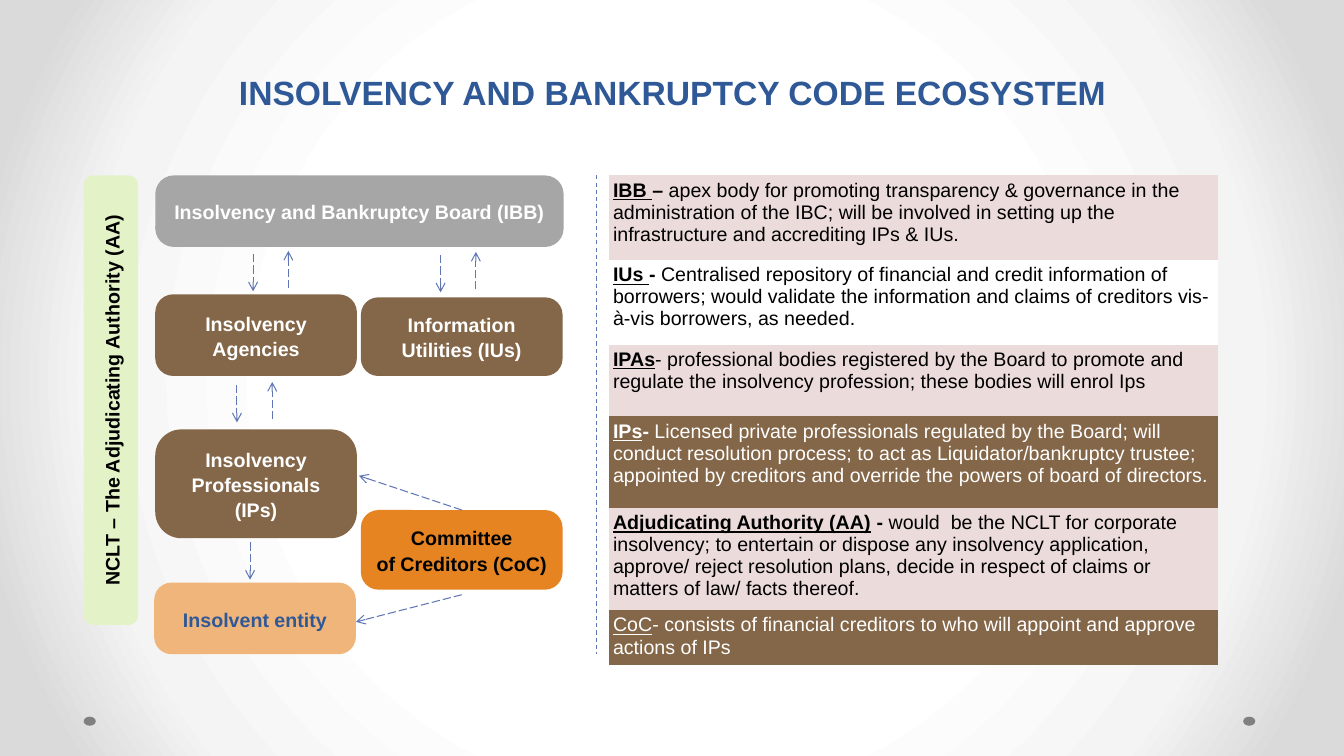
from lxml import etree
from pptx import Presentation
from pptx.dml.color import RGBColor
from pptx.enum.dml import MSO_LINE_DASH_STYLE as Dash
from pptx.enum.shapes import MSO_CONNECTOR, MSO_SHAPE
from pptx.enum.text import MSO_ANCHOR, PP_ALIGN
from pptx.oxml import parse_xml
from pptx.oxml.ns import nsdecls, qn
from pptx.util import Inches, Pt

COLORS = {
    "white": "FFFFFF", "black": "000000", "blue": "2F5897", "line": "6076B4",
    "brown": "846648", "pink": "ECDBDB", "gray": "A6A6A6", "green": "E3F2C7",
    "orange": "E68422", "peach": "F0B57A", "dot": "808080",
}
FONT = "Arial"
TITLE = "INSOLVENCY AND BANKRUPTCY CODE ECOSYSTEM"

# Lines of text, (left, top, width, height), corner, fill, text colour, rotation
BOXES = [
    (["Insolvency and Bankruptcy Board (IBB)"], (1.54, 1.74, 4.05, 0.71), 0.26, "gray", "white", 0),
    (["Insolvency Agencies"], (1.54, 2.92, 2, 0.81), 0.22, "brown", "white", 0),
    (["Insolvency Professionals (IPs)"], (1.54, 4.26, 2, 1.08), 0.24, "brown", "white", 0),
    (["Information Utilities (IUs)"], (3.58, 2.95, 2, 0.78), 0.22, "brown", "white", 0),
    (["NCLT – The Adjudicating Authority (AA)"], (-1.13, 3.7, 4.46, 0.54), 0.17, "green", "black", 270),
    (["Committee", "of Creditors (CoC)"], (3.58, 5.06, 2, 0.79), 0.22, "orange", "black", 0),
    (["Insolvent entity"], (1.53, 5.78, 2, 0.71), 0.24, "peach", "blue", 0),
]

# Left and top of each down/up pair of arrows
ARROW_PAIRS = [(2.51, 2.52), (4.37, 2.53), (2.35, 3.82)]
ARROW_LENGTH, PAIR_GAP, PAIR_RISE = 0.37, 0.35, 0.03
SINGLE_ARROWS = [
    ((4.58, 5.06), (3.56, 4.72)),
    ((4.58, 5.9), (3.53, 6.17)),
    ((2.48, 5.38), (2.48, 5.75)),
]
DIVIDER = ((5.92, 1.74), (5.92, 6.49))

# Row height, fill, text colour, then underlined term, bold?, bold dash, description
ROLES = [
    (0.84, "pink", "black", "IBB ", True, "– ",
     "apex body for promoting transparency & governance in the administration of the IBC; "
     "will be involved in setting up the infrastructure and accrediting IPs & IUs."),
    (0.84, "white", "black", "IUs ", True, "- ",
     "Centralised repository of financial and credit information of borrowers; would validate "
     "the information and claims of creditors vis-à-vis borrowers, as needed."),
    (0.71, "pink", "black", "IPAs", True, "",
     "- professional bodies registered by the Board to promote and regulate the insolvency "
     "profession; these bodies will enrol Ips"),
    (0.91, "brown", "white", "IPs", True, "-",
     " Licensed private professionals regulated by the Board; will conduct resolution process; "
     "to act as Liquidator/bankruptcy trustee; appointed by creditors and override the powers "
     "of board of directors."),
    (0.91, "pink", "black", "Adjudicating Authority (AA)", True, " -",
     " would  be the NCLT for corporate insolvency; to entertain or dispose any insolvency "
     "application, approve/ reject resolution plans, decide in respect of claims or matters "
     "of law/ facts thereof."),
    (0.54, "brown", "white", "CoC", False, "",
     "- consists of financial creditors to who will appoint and approve actions of IPs"),
]


def rgb(name):
    return RGBColor.from_string(COLORS[name])


def set_background(slide):
    """Fill the slide with a gradient that darkens from its centre."""
    stops = "".join(
        f'<a:gs pos="{position}000"><a:srgbClr val="{color}"/></a:gs>'
        for position, color in [(50, "FFFFFF"), (76, "F4F4F4"), (92, "DADADA")]
    )
    fill = slide.background.fill
    fill.solid()
    properties = slide.element.cSld.bg.bgPr
    properties.replace(properties[0], parse_xml(
        f'<a:gradFill {nsdecls("a")} rotWithShape="1"><a:gsLst>{stops}</a:gsLst>'
        '<a:path path="circle"><a:fillToRect l="50000" t="50000" r="50000" b="50000"/>'
        '</a:path></a:gradFill>'
    ))


def add_run(paragraph, text, color, size=14, bold=True, underline=False):
    run = paragraph.add_run()
    run.text = text
    run.font.name, run.font.size = FONT, Pt(size)
    run.font.bold, run.font.underline = bold, underline
    run.font.color.rgb = rgb(color)


def add_filled(slide, kind, bounds, fill):
    shape = slide.shapes.add_shape(kind, *map(Inches, bounds))
    shape.shadow.inherit = False
    shape.fill.solid()
    shape.fill.fore_color.rgb = rgb(fill)
    shape.line.fill.background()
    return shape


def add_box(slide, lines, bounds, corner, fill, color, rotation):
    box = add_filled(slide, MSO_SHAPE.ROUNDED_RECTANGLE, bounds, fill)
    box.adjustments[0] = corner
    box.rotation = rotation
    frame = box.text_frame
    frame.word_wrap = True
    frame.vertical_anchor = MSO_ANCHOR.MIDDLE
    for index, line in enumerate(lines):
        paragraph = frame.add_paragraph() if index else frame.paragraphs[0]
        paragraph.alignment = PP_ALIGN.CENTER
        paragraph.line_spacing = 1.07
        add_run(paragraph, line, color)


def add_line(slide, start, end, dash=Dash.LONG_DASH, arrow=True):
    connector = slide.shapes.add_connector(
        MSO_CONNECTOR.STRAIGHT, *map(Inches, (*start, *end)))
    connector.line.color.rgb = rgb("line")
    connector.line.width = Pt(0.75)
    connector.line.dash_style = dash
    if arrow:
        etree.SubElement(connector.line._get_or_add_ln(), qn("a:tailEnd"), type="arrow")
    etree.SubElement(connector._element.spPr, qn("a:effectLst"))


def add_title(slide):
    title = slide.shapes.add_textbox(*map(Inches, (0.67, 0.33, 12, 0.83)))
    frame = title.text_frame
    frame.word_wrap = True
    frame.vertical_anchor = MSO_ANCHOR.BOTTOM
    paragraph = frame.paragraphs[0]
    paragraph.alignment = PP_ALIGN.CENTER
    paragraph.line_spacing = Pt(58)
    add_run(paragraph, TITLE, "blue", 24)


def add_roles_table(slide):
    height = sum(role[0] for role in ROLES)
    bounds = map(Inches, (6.04, 1.74, 6.04, height))
    table = slide.shapes.add_table(len(ROLES), 1, *bounds).table
    table.first_row = table.horz_banding = False
    for row, role in zip(table.rows, ROLES):
        row_height, fill, color, term, bold, dash, description = role
        row.height = Inches(row_height)
        cell = row.cells[0]
        cell.fill.solid()
        cell.fill.fore_color.rgb = rgb(fill)
        cell.margin_left = cell.margin_right = Inches(0.04)
        cell.margin_top = cell.margin_bottom = Inches(0.04)
        for side in ("lnL", "lnR", "lnT", "lnB"):
            border = parse_xml(f'<a:{side} {nsdecls("a")} w="0"><a:noFill/></a:{side}>')
            cell.fill._xPr.insert(len(cell.fill._xPr) - 1, border)
        paragraph = cell.text_frame.paragraphs[0]
        add_run(paragraph, term, color, bold=bold, underline=True)
        if dash:
            add_run(paragraph, dash, color)
        add_run(paragraph, description, color, bold=False)


def main():
    presentation = Presentation()
    presentation.slide_width, presentation.slide_height = Inches(13.33), Inches(7.5)
    slide = presentation.slides.add_slide(presentation.slide_layouts[6])
    set_background(slide)
    for left in (12.33, 0.83):
        add_filled(slide, MSO_SHAPE.OVAL, (left, 7.11, 0.12, 0.09), "dot")
    add_title(slide)
    add_roles_table(slide)
    for box in BOXES:
        add_box(slide, *box)
    for start, end in SINGLE_ARROWS:
        add_line(slide, start, end)
    for left, top in ARROW_PAIRS:
        add_line(slide, (left, top), (left, top + ARROW_LENGTH))
        right, up_end = left + PAIR_GAP, top - PAIR_RISE
        add_line(slide, (right, up_end + ARROW_LENGTH), (right, up_end))
    add_line(slide, *DIVIDER, dash=Dash.DASH, arrow=False)
    presentation.save("out.pptx")


if __name__ == "__main__":
    main()
